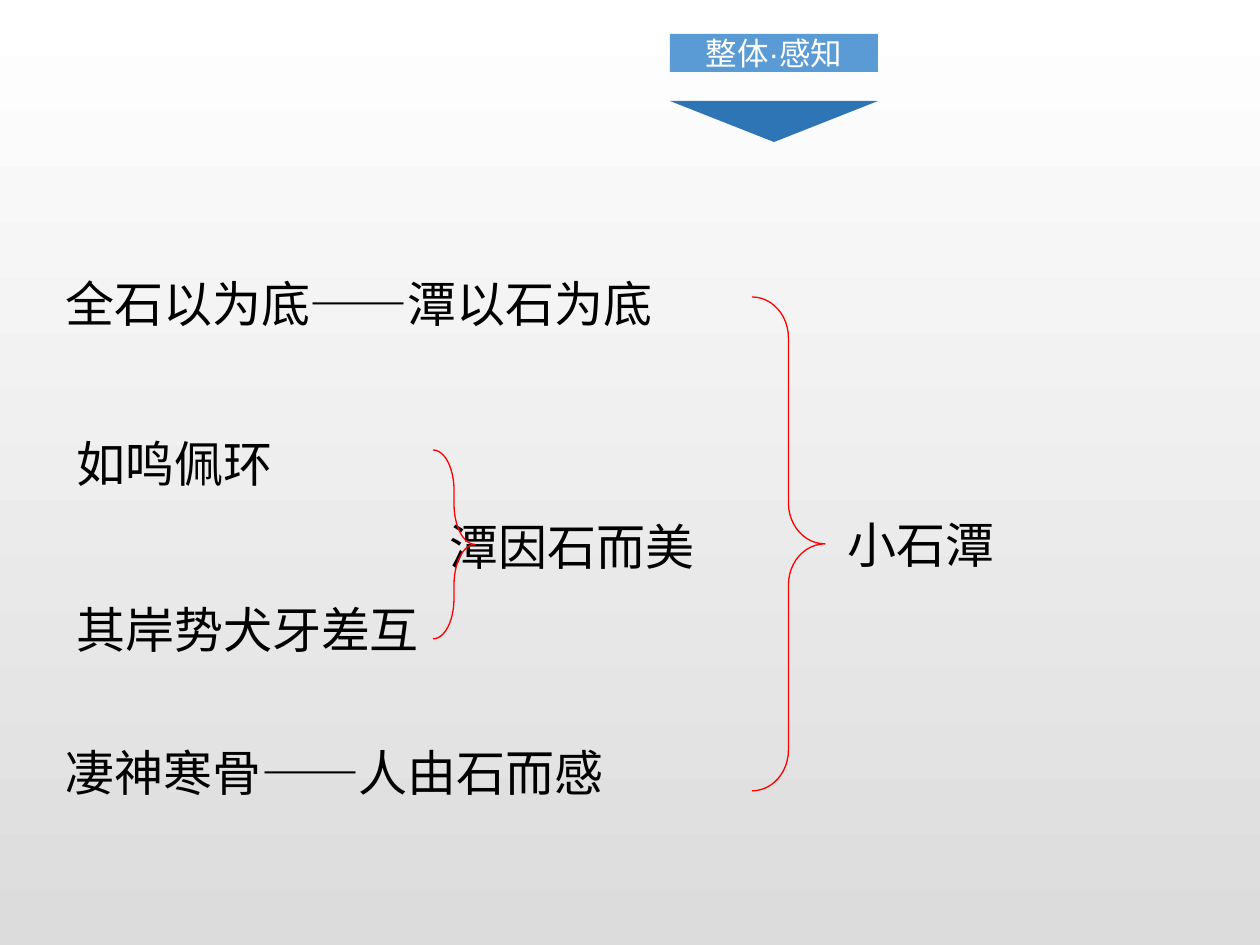
"""Builds the outline slide of the stone pond essay, with its braces and header."""
import pptx
import pptx.dml.color
import pptx.enum.dml
import pptx.enum.shapes
import pptx.enum.text
import pptx.util

PX = 914400 / 126
WHITE = pptx.dml.color.RGBColor(0xFF, 0xFF, 0xFF)
GREY = pptx.dml.color.RGBColor(0xDC, 0xDC, 0xDC)
BLACK = pptx.dml.color.RGBColor(0, 0, 0)
RED = pptx.dml.color.RGBColor(0xFF, 0, 0)
LIGHT_BLUE = pptx.dml.color.RGBColor(0x5B, 0x9B, 0xD5)
DARK_BLUE = pptx.dml.color.RGBColor(0x2E, 0x75, 0xB6)
MSO_SHAPE = pptx.enum.shapes.MSO_SHAPE
GROW = pptx.enum.text.MSO_AUTO_SIZE.SHAPE_TO_FIT_TEXT


def emu(*lengths):
    return [pptx.util.Emu(round(n * PX)) for n in lengths]


def write(p, text, color, font):
    r = p.add_run()
    r.text = text
    r.font.color.rgb = color
    for name, value in font.items():
        setattr(r.font, name, value)


prs = pptx.Presentation()
prs.slide_width, prs.slide_height = emu(1260, 945)
s = prs.slides.add_slide(prs.slide_layouts[6])

bg = s.background.fill
bg.gradient()
bg.gradient_angle = 270
for stop, color in zip(bg.gradient_stops, (WHITE, GREY)):
    stop.color.rgb = color

body_font = {"size": pptx.util.Pt(28), "name": "Times New Roman"}
notes = [
    ((53, 267, 625, 72), [("全石以为底——潭以石为底", 0)]),
    ((64, 427, 689, 249), [("如鸣佩环", 0), ("潭因石而美", 373), ("其岸势犬牙差互", 0)]),
    ((53, 736, 851, 72), [("凄神寒骨——人由石而感", 0)]),
    ((835, 508, 179, 72), [("小石潭", 0)]),
]
for box, lines in notes:
    tf = s.shapes.add_textbox(*emu(*box)).text_frame
    tf.word_wrap = True
    tf.auto_size = GROW
    for i, (text, indent) in enumerate(lines):
        p = tf.add_paragraph() if i else tf.paragraphs[0]
        p.space_before = pptx.util.Pt(14 if i else 0)
        if indent:
            p._p.get_or_add_pPr().set("marL", str(emu(indent)[0]))
        write(p, text, BLACK, body_font)

for box, curve in [((433, 450, 42, 189), 0.96), ((752, 297, 73, 494), 0.56)]:
    sp = s.shapes.add_shape(MSO_SHAPE.RIGHT_BRACE, *emu(*box))
    sp.adjustments[0] = curve
    sp.shadow.inherit = False
    sp.fill.background()
    sp.line.color.rgb = RED
    sp.line.width = pptx.util.Pt(0.75)

header = s.shapes.add_group_shape()
banner = header.shapes.add_shape(MSO_SHAPE.RECTANGLE, *emu(670, 34, 208, 38))
pointer = header.shapes.add_shape(MSO_SHAPE.ISOSCELES_TRIANGLE, *emu(670, 101, 208, 41))
pointer.rotation = 180
for sp, color in [(banner, LIGHT_BLUE), (pointer, DARK_BLUE)]:
    sp.shadow.inherit = False
    sp.fill.solid()
    sp.fill.fore_color.rgb = color
    sp.line.fill.background()

tf = banner.text_frame
frame_format = {
    "margin_left": 0, "margin_top": 0, "margin_right": 0, "margin_bottom": 0,
    "word_wrap": True, "auto_size": GROW,
    "vertical_anchor": pptx.enum.text.MSO_ANCHOR.MIDDLE,
}
for name, value in frame_format.items():
    setattr(tf, name, value)
p = tf.paragraphs[0]
p.alignment = pptx.enum.text.PP_ALIGN.CENTER
write(p, "整体·感知", WHITE, {"size": pptx.util.Pt(18), "name": "Arial"})

prs.save("out.pptx")
